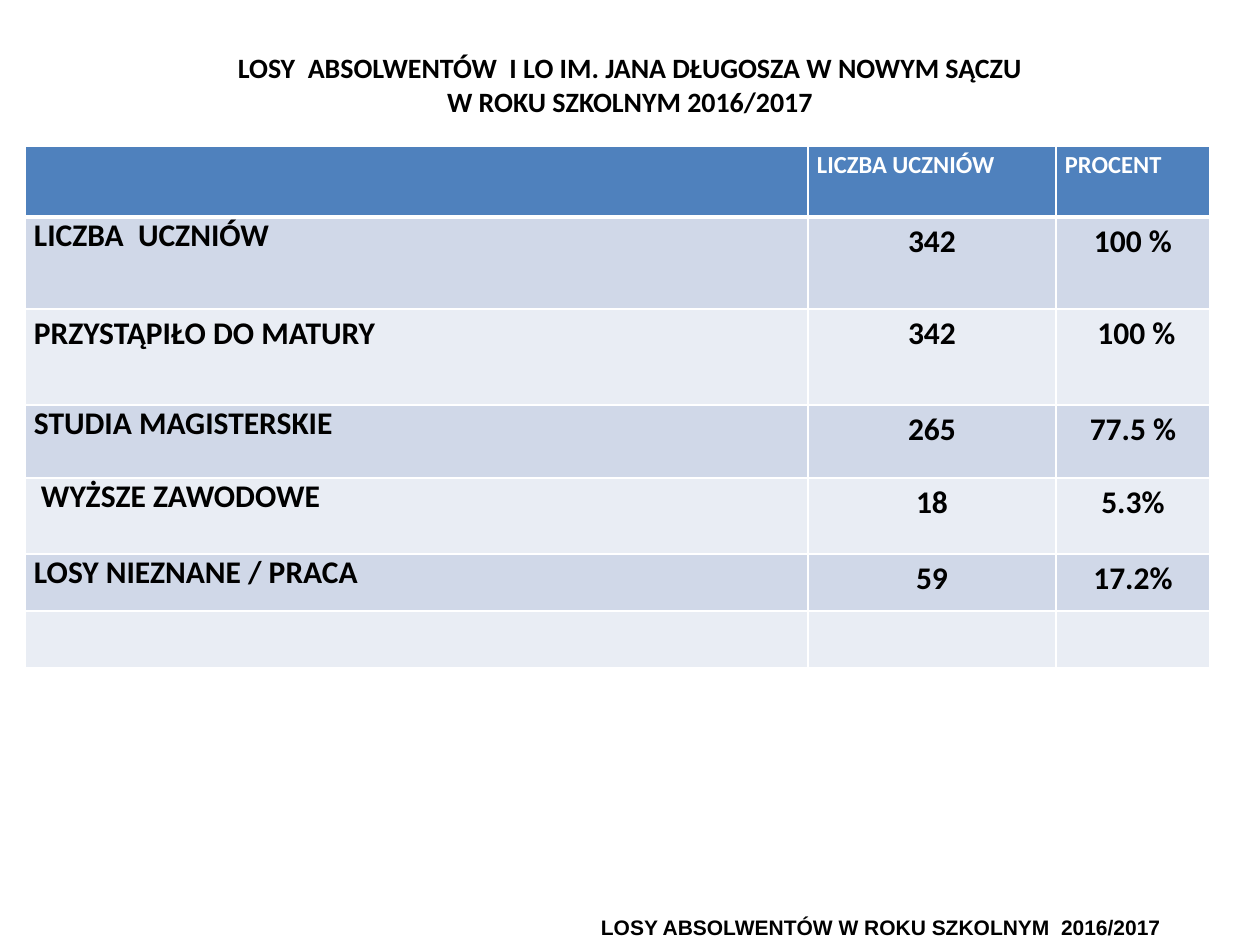
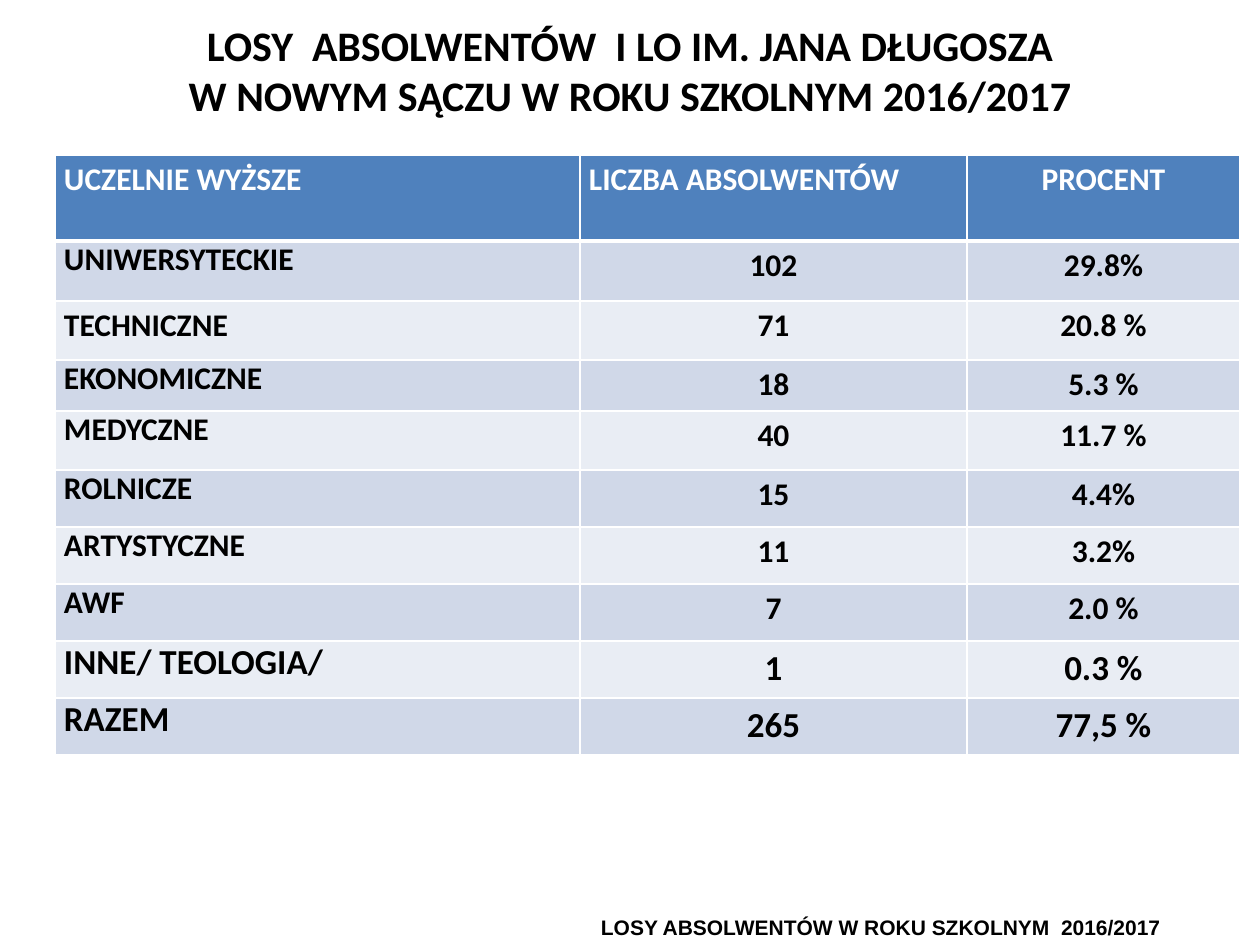
from lxml.etree import SubElement as Sub
from pptx import Presentation as Deck
from pptx.dml.color import RGBColor as Rgb
from pptx.enum.text import MSO_ANCHOR as Anchor, PP_ALIGN as Align
from pptx.oxml.ns import qn
from pptx.util import Pt

UNIT = 914400 / 126  # one px in EMU
WHITE, BLACK, BLUE = "FFFFFF", "000000", "4F81BD"
BANDS = ("D0D8E8", "E9EDF4")
TEXT, FOOT = "Calibri", "Arial"


def px(n):
    return round(n * UNIT)


def hue(code):
    return Rgb.from_string(code)


class Page:
    """Holds the deck style and the current slide."""

    def __init__(self):
        self.deck = Deck()
        self.deck.slide_width, self.deck.slide_height = px(1260), px(945)
        self.slide = None

    def start(self):
        self.slide = self.deck.slides.add_slide(self.deck.slide_layouts[6])

    def style(self, frame, size, color=BLACK, align=Align.LEFT, font=TEXT, gap=1):
        for par in frame.paragraphs:
            par.alignment, par.line_spacing = align, gap
            for run in par.runs:
                face = run.font
                face.name, face.size, face.bold = font, Pt(size), True
                face.color.rgb = hue(color)

    def label(self, text, box, size, align, font=TEXT):
        frame = self.slide.shapes.add_textbox(*map(px, box)).text_frame
        frame.word_wrap, frame.vertical_anchor = True, Anchor.MIDDLE
        frame.margin_left = frame.margin_right = 0
        frame.margin_top = frame.margin_bottom = 0
        frame.text = text
        self.style(frame, size, align=align, font=font)

    def title(self, text, top, high, size):
        self.label(text, (63, top, 1134, high), size, Align.CENTER)

    def footer(self):
        self.label("LOSY ABSOLWENTÓW W ROKU SZKOLNYM  2016/2017",
                   (561, 915, 600, 24), 12, Align.RIGHT, FOOT)

    def edge(self, cell, head, below):
        props = cell._tc.get_or_add_tcPr()
        for side in "LRTB":
            thick = (head and side == "B") or (below and side == "T")
            line = Sub(props, qn(f"a:ln{side}"), w=str(Pt(3 if thick else 1)))
            fill = Sub(line, qn("a:solidFill"))
            Sub(fill, qn("a:srgbClr"), val=WHITE)

    def cell(self, cell, text, fill, nudge):
        cell.margin_left, cell.margin_right = px(9 + nudge), px(9)
        cell.margin_top = cell.margin_bottom = 0
        cell.text_frame.text = text
        cell.fill.solid()
        cell.fill.fore_color.rgb = hue(fill)

    def table(self, left, top, cols, highs, rows, size, mid=(), tall=(), big=(), nudge=()):
        """mid: centred heads; tall: rows with spaced labels; big: 20 pt rows."""
        box = (left, top, sum(cols), sum(highs))
        grid = self.slide.shapes.add_table(len(rows), len(cols), *map(px, box)).table
        grid.horz_banding = False
        for col, wide in zip(grid.columns, cols):
            col.width = px(wide)
        for r, (row, high) in enumerate(zip(rows, highs)):
            grid.rows[r].height = px(high)
            head = r == 0
            for c, text in enumerate(row):
                cell = grid.cell(r, c)
                self.edge(cell, head, r == 1)
                self.cell(cell, text, BLUE if head else BANDS[(r - 1) % 2],
                          7 if (r, c) in nudge else 0)
                center = c in mid if head else c > 0
                self.style(cell.text_frame,
                           size if head else 20 if r in big else 18,
                           WHITE if head else BLACK,
                           Align.CENTER if center else Align.LEFT,
                           gap=1.15 if head or c or r in tall else 1)


def main():
    page = Page()

    # Graduates overall
    page.start()
    page.title("LOSY  ABSOLWENTÓW  I LO IM. JANA DŁUGOSZA W NOWYM SĄCZU\n"
               "W ROKU SZKOLNYM 2016/2017", 50, 68, 16)
    page.footer()
    page.table(25, 146, (783, 248, 154), (71, 92, 96, 73, 76, 57, 57), [
        ("", "LICZBA UCZNIÓW", "PROCENT"),
        ("LICZBA  UCZNIÓW", "342", "100 %"),
        ("PRZYSTĄPIŁO DO MATURY", "342", "100 %"),
        ("STUDIA MAGISTERSKIE", "265", "77.5 %"),
        ("WYŻSZE ZAWODOWE", "18", "5.3%"),
        ("LOSY NIEZNANE / PRACA", "59", "17.2%"),
        ("", "", ""),
    ], 14, tall=(2,), nudge=((2, 2), (4, 0)))

    # Graduates by kind of university
    page.start()
    page.title("LOSY  ABSOLWENTÓW  I LO IM. JANA DŁUGOSZA\n"
               "W NOWYM SĄCZU W ROKU SZKOLNYM 2016/2017", 19, 102, 24)
    page.footer()
    page.table(55, 155, (525, 387, 273), (86, 60, 59, 51, 59) + (57,) * 5, [
        ("UCZELNIE WYŻSZE", "LICZBA ABSOLWENTÓW", "PROCENT"),
        ("UNIWERSYTECKIE", "102", "29.8%"),
        ("TECHNICZNE", "71", "20.8 %"),
        ("EKONOMICZNE", "18", "5.3 %"),
        ("MEDYCZNE", "40", "11.7 %"),
        ("ROLNICZE", "15", "4.4%"),
        ("ARTYSTYCZNE", "11", "3.2%"),
        ("AWF", "7", "2.0 %"),
        ("INNE/ TEOLOGIA/", "1", "0.3 %"),
        ("RAZEM", "265", "77,5 %"),
    ], 18, mid=(2,), tall=(2,), big=(8, 9))

    page.deck.save("out.pptx")


if __name__ == "__main__":
    main()
